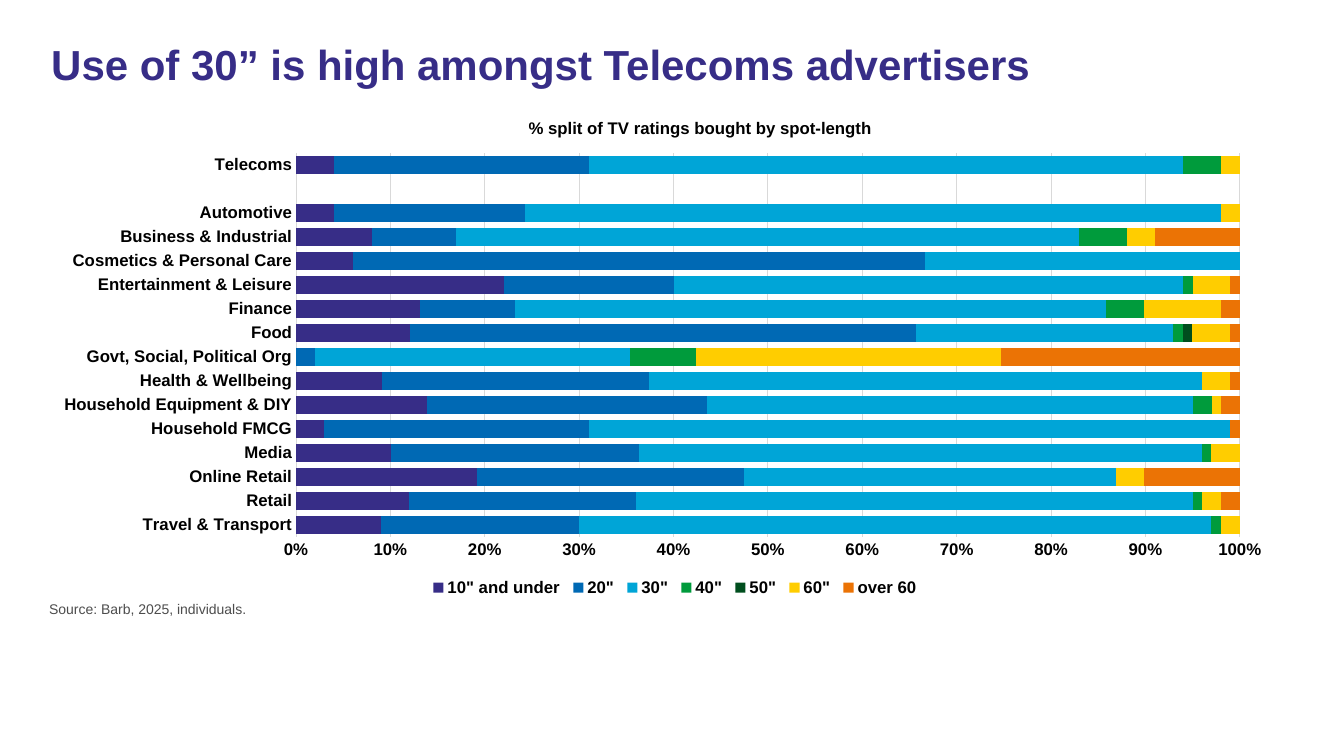
from dataclasses import dataclass
from typing import Optional

from lxml import etree
from pptx import Presentation
from pptx.chart.data import CategoryChartData
from pptx.dml.color import RGBColor
from pptx.enum.chart import XL_CHART_TYPE, XL_LEGEND_POSITION, XL_TICK_MARK
from pptx.oxml.ns import qn
from pptx.util import Pt

BAR_STACKED_100 = XL_CHART_TYPE.BAR_STACKED_100
LEGEND_BOTTOM = XL_LEGEND_POSITION.BOTTOM
NO_TICK = XL_TICK_MARK.NONE
FONT = "Arial"
PURPLE, BLACK, GREY, GRID = "372D87", "000000", "4D4D4D", "D9D9D9"


@dataclass
class TextItem:
    text: str
    left: float
    top: float
    width: float
    height: float
    size: float
    color: str
    bold: bool = False
    line_spacing: float = 1.0


@dataclass
class SpotLength:
    name: str
    color: str
    values: list[Optional[int]]


TEXTS = [
    TextItem("Use of 30” is high amongst Telecoms advertisers",
             29.5, 28, 893, 80.6, 30, PURPLE, True, 0.9),
    TextItem("Source: Barb, 2025, individuals.", 28, 425.5, 906.5, 23.8, 10, GREY),
]

# Sectors run from the bottom of the chart to the top
SECTORS = [
    "Travel & Transport", "Retail", "Online Retail", "Media", "Household FMCG",
    "Household Equipment & DIY", "Health & Wellbeing",
    "Govt, Social, Political Org", "Food", "Finance", "Entertainment & Leisure",
    "Cosmetics & Personal Care", "Business & Industrial", "Automotive", "",
    "Telecoms",
]
SPOT_LENGTHS = [
    SpotLength('10" and under', PURPLE,
               [9, 12, 19, 10, 3, 14, 9, 0, 12, 13, 22, 6, 8, 4, None, 4]),
    SpotLength('20"', "0069B4",
               [21, 24, 28, 26, 28, 30, 28, 2, 53, 10, 18, 60, 9, 20, None, 27]),
    SpotLength('30"', "00A5D7",
               [67, 59, 39, 59, 68, 52, 58, 33, 27, 62, 54, 33, 66, 73, None, 63]),
    SpotLength('40"', "009B3C",
               [1, 1, 0, 1, 0, 2, 0, 7, 1, 4, 1, 0, 5, 0, None, 4]),
    SpotLength('50"', "004E1E",
               [None, None, None, 0, None, None, None, 0, 1, 0, 0, None, 0,
                None, None, None]),
    SpotLength('60"', "FFCD00",
               [2, 2, 3, 3, 0, 1, 3, 32, 4, 8, 4, 0, 3, 2, None, 2]),
    SpotLength("over 60", "EB7305",
               [0, 2, 10, 0, 1, 2, 1, 25, 1, 2, 1, 0, 9, 0, None, 0]),
]


def rgb(color: str) -> RGBColor:
    return RGBColor.from_string(color)


def style_font(font, size: float, color: str, bold: bool) -> None:
    font.name, font.size, font.bold = FONT, Pt(size), bold
    font.color.rgb = rgb(color)


def add_text(s, item: TextItem) -> None:
    box = s.shapes.add_textbox(Pt(item.left), Pt(item.top),
                               Pt(item.width), Pt(item.height))
    tf = box.text_frame
    tf.word_wrap = True
    tf.text = item.text
    p = tf.paragraphs[0]
    p.line_spacing = item.line_spacing
    style_font(p.runs[0].font, item.size, item.color, item.bold)


def place(element, index: int, target: str = "", **fractions: float) -> None:
    """Set a manual layout, in fractions of the chart area."""
    for old in element.findall(qn("c:layout")):
        element.remove(old)
    layout = etree.Element(qn("c:layout"))
    manual = etree.SubElement(layout, qn("c:manualLayout"))
    if target:
        etree.SubElement(manual, qn("c:layoutTarget")).set("val", target)
    for mode in ("xMode", "yMode"):
        etree.SubElement(manual, qn(f"c:{mode}")).set("val", "edge")
    for name, value in fractions.items():
        etree.SubElement(manual, qn(f"c:{name}")).set("val", str(value))
    element.insert(index, layout)


def add_spot_chart(s) -> None:
    data = CategoryChartData(number_format="0")
    data.categories = SECTORS
    for spot in SPOT_LENGTHS:
        data.add_series(spot.name, spot.values)
    chart = s.shapes.add_chart(BAR_STACKED_100, Pt(28), Pt(71.3),
                               Pt(890.6), Pt(359.3), data).chart
    style_font(chart.font, 12, BLACK, True)

    # Bars
    plot = chart.plots[0]
    plot.gap_width, plot.overlap, plot.vary_by_categories = 30, 100, False
    for series, spot in zip(plot.series, SPOT_LENGTHS):
        series.format.fill.solid()
        series.format.fill.fore_color.rgb = rgb(spot.color)
        series.invert_if_negative = False

    # Axes
    sectors, share = chart.category_axis, chart.value_axis
    for axis in (sectors, share):
        axis.major_tick_mark = axis.minor_tick_mark = NO_TICK
        style_font(axis.tick_labels.font, 12, BLACK, True)
    share.has_major_gridlines = True
    for line in (sectors.format.line, share.major_gridlines.format.line):
        line.color.rgb = rgb(GRID)
        line.width = Pt(0.75)
    share.format.line.fill.background()
    share.minimum_scale, share.maximum_scale, share.major_unit = 0, 1, 0.1
    share.tick_labels.number_format = "0%"
    share.tick_labels.number_format_is_linked = False

    # Title and legend
    chart.has_title = True
    tf = chart.chart_title.text_frame
    tf.text = "% split of TV ratings bought by spot-length"
    style_font(tf.paragraphs[0].runs[0].font, 12, BLACK, True)
    chart.has_legend = True
    legend = chart.legend
    legend.position, legend.include_in_layout = LEGEND_BOTTOM, False
    style_font(legend.font, 12, BLACK, True)

    # Positions inside the chart
    place(chart._chartSpace.chart.plotArea, 0, "inner",
          x=0.206, y=0.106, w=0.757, h=0.763)
    place(chart.chart_title._element, 1, x=0.39, y=0.03)
    place(legend._element, 1, x=0.31, y=0.94, w=0.4, h=0.06)


def main() -> None:
    prs = Presentation()
    prs.slide_width, prs.slide_height = Pt(960), Pt(540)
    s = prs.slides.add_slide(prs.slide_layouts[6])
    add_spot_chart(s)
    for item in TEXTS:
        add_text(s, item)
    prs.save("out.pptx")


if __name__ == "__main__":
    main()
